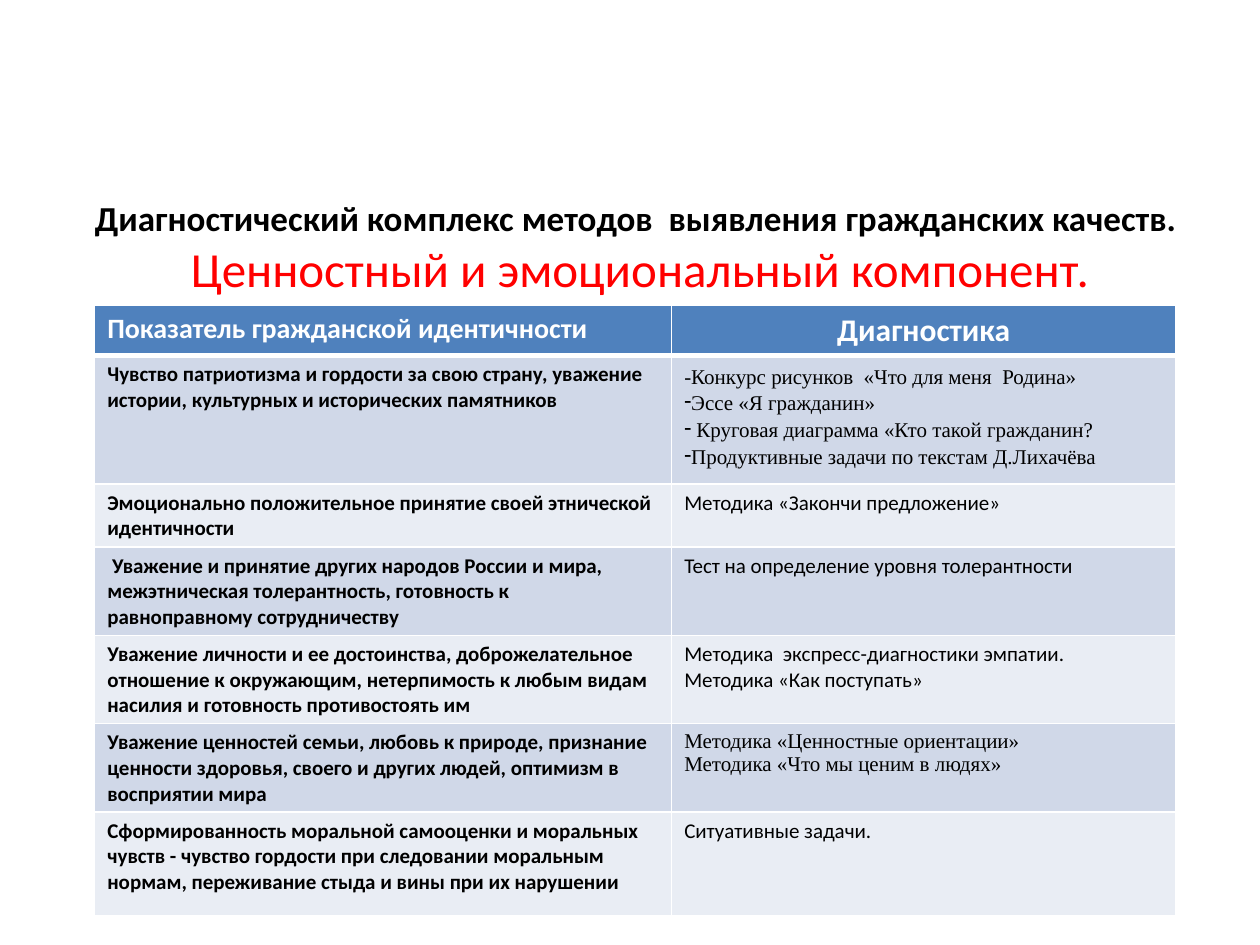
from dataclasses import dataclass

from lxml import etree
from pptx import Presentation
from pptx.dml.color import RGBColor
from pptx.enum.text import MSO_ANCHOR, PP_ALIGN
from pptx.oxml.ns import qn
from pptx.util import Cm, Pt

CENTER, LEFT = PP_ALIGN.CENTER, PP_ALIGN.LEFT
MIDDLE = MSO_ANCHOR.MIDDLE


@dataclass(frozen=True)
class Theme:
    black: str = "000000"
    white: str = "FFFFFF"
    accent: str = "FF0000"
    header: str = "4F81BD"
    bands: tuple = ("D0D8E8", "E9EDF4")
    sans: str = "Calibri"
    serif: str = "Times New Roman"
    title: int = 20
    subtitle: int = 28
    indicator_head: int = 16
    method_head: int = 18
    body: int = 12


theme = Theme()


def style_run(run, size, color, bold=False, font=theme.sans):
    run.font.name = font
    run.font.size = Pt(size)
    run.font.bold = bold
    run.font.color.rgb = RGBColor.from_string(color)


def add_border(cell, side, width):
    line = etree.SubElement(cell._tc.get_or_add_tcPr(), qn(f"a:{side}"), w=str(Pt(width)))
    fill = etree.SubElement(line, qn("a:solidFill"))
    etree.SubElement(fill, qn("a:srgbClr"), val=theme.white)


presentation = Presentation()
presentation.slide_width = Cm(25.4)
presentation.slide_height = Cm(19.05)
slide = presentation.slides.add_slide(presentation.slide_layouts[6])

heading = slide.shapes.add_textbox(Cm(1.47), Cm(3.81), Cm(22.86), Cm(2.34)).text_frame
heading.word_wrap = True
heading.vertical_anchor = MIDDLE
heading_line = heading.paragraphs[0]
heading_line.text = (
    "Диагностический комплекс методов  выявления гражданских качеств. \v"
    "Ценностный и эмоциональный компонент."
)
heading_line.alignment = CENTER
topic, component = heading_line.runs
style_run(topic, theme.title, theme.black, bold=True)
style_run(component, theme.subtitle, theme.accent)

criteria = [
    ("Показатель гражданской идентичности", ["Диагностика"]),
    ("Чувство патриотизма и гордости за свою страну, уважение истории, "
     "культурных и исторических памятников",
     ["-Конкурс рисунков  «Что для меня  Родина»",
      "Эссе «Я гражданин»",
      " Круговая диаграмма «Кто такой гражданин?",
      "Продуктивные задачи по текстам Д.Лихачёва"]),
    ("Эмоционально положительное принятие своей этнической идентичности",
     ["Методика «Закончи предложение»"]),
    (" Уважение и принятие других народов России и мира, межэтническая "
     "толерантность, готовность к равноправному сотрудничеству",
     ["Тест на определение уровня толерантности"]),
    ("Уважение личности и ее достоинства, доброжелательное отношение к окружающим, "
     "нетерпимость к любым видам насилия и готовность противостоять им",
     ["Методика  экспресс-диагностики эмпатии.", "Методика «Как поступать»"]),
    ("Уважение ценностей семьи, любовь к природе, признание ценности здоровья, "
     "своего и других людей, оптимизм в восприятии мира",
     ["Методика «Ценностные ориентации»", "Методика «Что мы ценим в людях»"]),
    ("Сформированность моральной самооценки и моральных чувств - чувство гордости "
     "при следовании моральным нормам, переживание стыда и вины при их нарушении",
     ["Ситуативные задачи."]),
]
row_heights = [1, 2.54, 1.25, 1.75, 1.75, 1.75, 2.1]
column_widths = [11.63, 10.16]
patriotism_row, values_row = 1, 5

diagnostics = slide.shapes.add_table(
    len(criteria), len(column_widths), Cm(1.91), Cm(6.15),
    Cm(sum(column_widths)), Cm(sum(row_heights)),
).table
for column, width in zip(diagnostics.columns, column_widths):
    column.width = Cm(width)

for row, (indicator, methods) in enumerate(criteria):
    diagnostics.rows[row].height = Cm(row_heights[row])
    is_header = row == 0
    for column, lines in enumerate(([indicator], methods)):
        cell = diagnostics.cell(row, column)
        is_method = column == 1
        add_border(cell, "lnL", 1)
        add_border(cell, "lnR", 1)
        add_border(cell, "lnT", 3 if row == 1 else 1)
        add_border(cell, "lnB", 3 if is_header else 1)
        cell.fill.solid()
        band = theme.header if is_header else theme.bands[(row - 1) % 2]
        cell.fill.fore_color.rgb = RGBColor.from_string(band)

        size = theme.body
        if is_header:
            size = theme.method_head if is_method else theme.indicator_head
        serif = is_method and row in (patriotism_row, values_row)
        cell.text_frame.text = "\n".join(lines)
        for number, paragraph in enumerate(cell.text_frame.paragraphs):
            paragraph.alignment = CENTER if is_header and is_method else LEFT
            if is_method and row == patriotism_row:
                paragraph.line_spacing = 1.15
                if number > 0:
                    etree.SubElement(paragraph._p.get_or_add_pPr(), qn("a:buChar"), char="-")
            style_run(
                paragraph.runs[0], size,
                theme.white if is_header else theme.black,
                bold=is_header or not is_method,
                font=theme.serif if serif else theme.sans,
            )

presentation.save("out.pptx")
